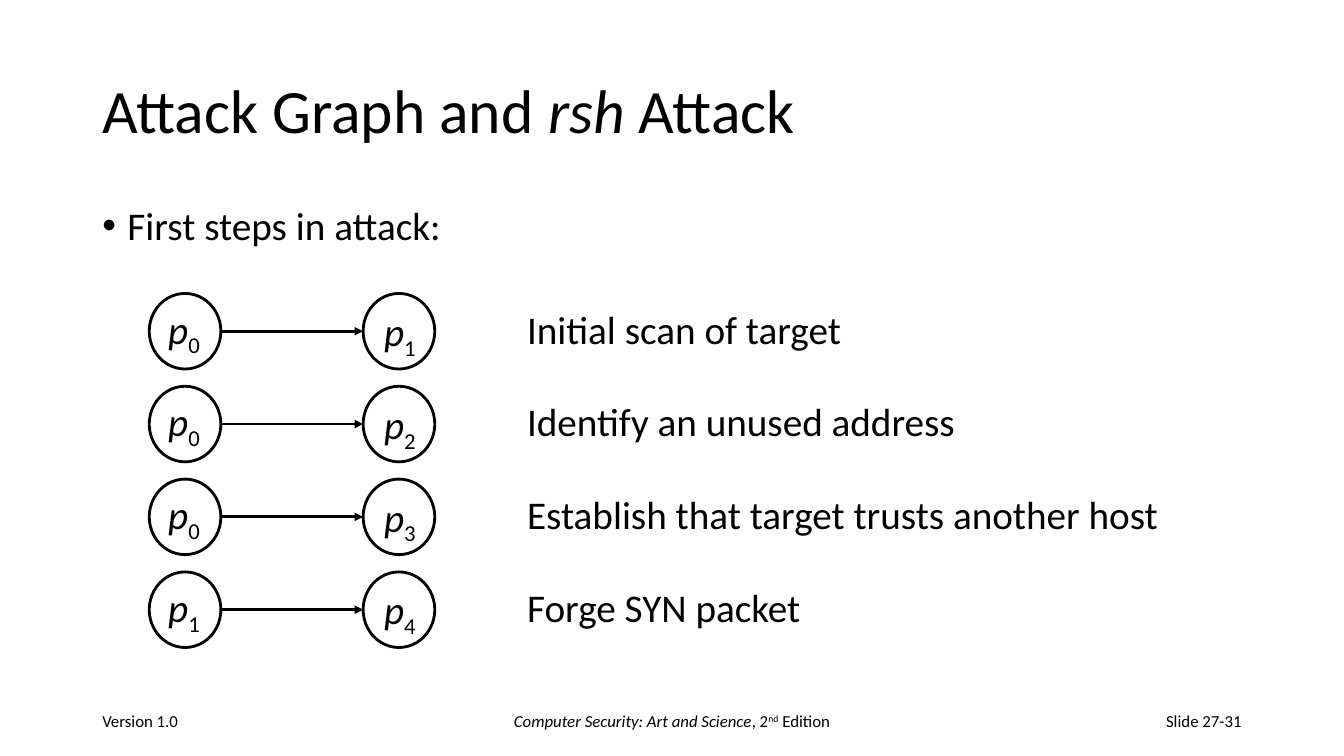
from collections import namedtuple
from dataclasses import dataclass

from lxml import etree
from pptx import Presentation
from pptx.dml.color import RGBColor
from pptx.enum.shapes import MSO_CONNECTOR, MSO_SHAPE
from pptx.enum.text import MSO_ANCHOR, MSO_AUTO_SIZE, PP_ALIGN
from pptx.oxml.ns import qn
from pptx.util import Pt

Box = namedtuple("Box", "left top width height")
Step = namedtuple("Step", "source target description width")


@dataclass(frozen=True)
class Theme:
    font: str = "Calibri"
    ink: RGBColor = RGBColor(0, 0, 0)
    title: int = 44
    body: int = 28
    footer: int = 12
    line: int = 2


THEME = Theme()
SUBSCRIPT, SUPERSCRIPT = -25, 30
ROW_PITCH = 66.3
NODE_WIDTH, NODE_HEIGHT = 51.2, 54
LABEL_HEIGHT = 41

STEPS = [
    Step("0", "1", "Initial scan of target", 241),
    Step("0", "2", "Identify an unused address", 324),
    Step("0", "3", "Establish that target trusts another host", 470),
    Step("1", "4", "Forge SYN packet", 212),
]


def points(box):
    return [Pt(value) for value in box]


def apply_format(target, values):
    for name, value in values.items():
        setattr(target, name, value)


def write(paragraph, size, runs):
    """Add runs given as (text, italic, baseline percent) tuples."""
    for text, italic, baseline in runs:
        run = paragraph.add_run()
        run.text = text
        apply_format(run.font, {"name": THEME.font, "size": Pt(size), "italic": italic})
        run.font.color.rgb = THEME.ink
        if baseline:
            run._r.get_or_add_rPr().set("baseline", str(baseline * 1000))


def plain(text):
    return [(text, False, 0)]


def add_text(slide, box, size, runs, align=PP_ALIGN.LEFT, **frame_format):
    shape = slide.shapes.add_textbox(*points(box))
    apply_format(shape.text_frame, {"word_wrap": True, **frame_format})
    paragraph = shape.text_frame.paragraphs[0]
    paragraph.alignment = align
    write(paragraph, size, runs)
    return paragraph


def add_label(slide, box, runs):
    add_text(slide, box, THEME.body, runs,
             word_wrap=False, auto_size=MSO_AUTO_SIZE.SHAPE_TO_FIT_TEXT)


def add_title(slide, box):
    title = slide.shapes.title
    frame_box = dict(zip(Box._fields, points(box)))
    apply_format(title, frame_box)
    apply_format(title.text_frame, {"vertical_anchor": MSO_ANCHOR.MIDDLE,
                                    "auto_size": MSO_AUTO_SIZE.NONE})
    paragraph = title.text_frame.paragraphs[0]
    apply_format(paragraph, {"alignment": PP_ALIGN.LEFT, "line_spacing": 0.9})
    write(paragraph, THEME.title, [("Attack Graph and ", False, 0),
                                   ("rsh", True, 0), (" Attack", False, 0)])


def add_bullet(slide, box, text):
    paragraph = add_text(slide, box, THEME.body, plain(text))
    paragraph.line_spacing = 0.9
    properties = paragraph._p.get_or_add_pPr()
    properties.set("marL", str(Pt(18)))
    properties.set("indent", str(-Pt(18)))
    etree.SubElement(properties, qn("a:buFont")).set("typeface", "Arial")
    etree.SubElement(properties, qn("a:buChar")).set("char", "•")


def add_footer(slide, box):
    center = [("Computer Security: Art and Science", True, 0), (", 2", False, 0),
              ("nd", False, SUPERSCRIPT), (" Edition", False, 0)]
    side, middle = 216, 324
    parts = [
        (box.left, side, PP_ALIGN.LEFT, plain("Version 1.0")),
        (box.left + (box.width - middle) / 2, middle, PP_ALIGN.CENTER, center),
        (box.left + box.width - side, side, PP_ALIGN.RIGHT, plain("Slide 27-31")),
    ]
    for left, width, align, runs in parts:
        add_text(slide, Box(left, box.top, width, box.height), THEME.footer, runs,
                 align, vertical_anchor=MSO_ANCHOR.MIDDLE)


def add_node(slide, left, top):
    node = slide.shapes.add_shape(
        MSO_SHAPE.OVAL, *points(Box(left, top, NODE_WIDTH, NODE_HEIGHT)))
    node.shadow.inherit = False
    node.fill.background()
    node.line.color.rgb = THEME.ink
    node.line.width = Pt(THEME.line)


def add_arrow(slide, start, end, y):
    arrow = slide.shapes.add_connector(
        MSO_CONNECTOR.STRAIGHT, *points((start, y, end, y)))
    arrow.line.color.rgb = THEME.ink
    arrow.line.width = Pt(THEME.line)
    etree.SubElement(arrow.line._get_or_add_ln(), qn("a:tailEnd")).set("type", "triangle")
    etree.SubElement(arrow._element.spPr, qn("a:effectLst"))


def add_step(slide, box, step):
    """Draw source node, arrow, target node and description in one row."""
    target_left = box.left + 152.8
    label_top = box.top + 4.6
    add_node(slide, box.left, box.top)
    add_node(slide, target_left, box.top)
    add_arrow(slide, box.left + NODE_WIDTH, target_left, box.top + box.height / 2)
    for left, top, index in [(box.left + 6.5, label_top, step.source),
                             (target_left + 7.9, label_top + 1.8, step.target)]:
        add_label(slide, Box(left, top, 39, LABEL_HEIGHT),
                  [("p", True, 0), (index, False, SUBSCRIPT)])
    add_label(slide, Box(box.left + 262.8, label_top, step.width, LABEL_HEIGHT),
              plain(step.description))


def add_steps(slide, box):
    for row, step in enumerate(STEPS):
        top = box.top + row * ROW_PITCH
        add_step(slide, Box(box.left, top, box.width, NODE_HEIGHT), step)


def main():
    presentation = Presentation()
    apply_format(presentation, {"slide_width": Pt(960), "slide_height": Pt(540)})
    slide = presentation.slides.add_slide(presentation.slide_layouts[5])
    add_title(slide, Box(66, 28.8, 828, 104.4))
    add_bullet(slide, Box(66, 144, 828, 39.6), "First steps in attack:")
    add_footer(slide, Box(66, 500.4, 828, 28.8))
    add_steps(slide, Box(106.6, 209.6, 733, 253))
    presentation.save("out.pptx")


if __name__ == "__main__":
    main()
